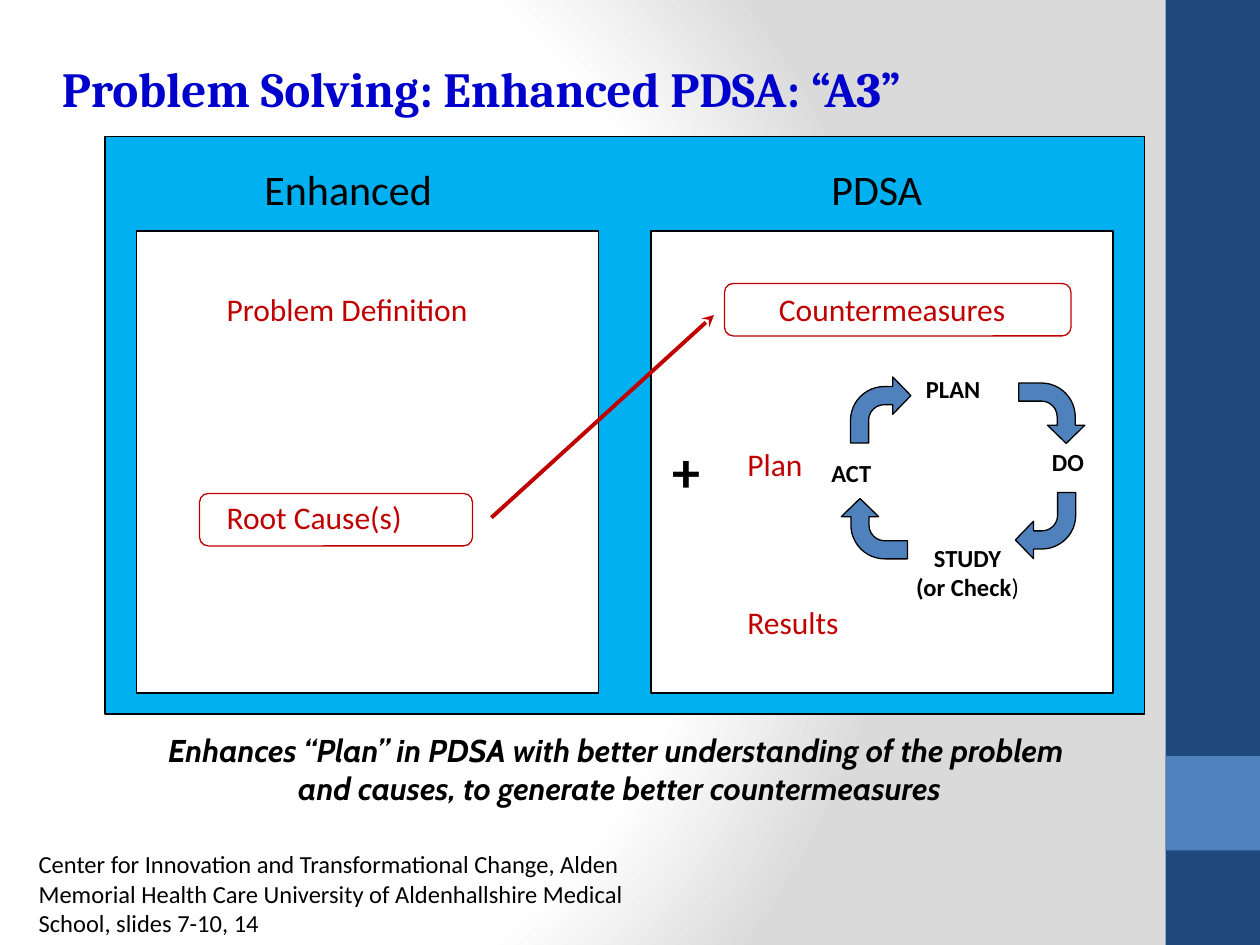
from lxml.etree import SubElement
from pptx import Presentation
from pptx.dml.color import RGBColor
from pptx.enum.shapes import MSO_CONNECTOR, MSO_SHAPE
from pptx.enum.text import MSO_ANCHOR, PP_ALIGN
from pptx.oxml import parse_xml
from pptx.oxml.ns import nsdecls, qn
from pptx.util import Inches, Pt

COLORS = {
    "white": "FFFFFF", "gray": "DADADA", "black": "000000", "navy": "1F497D",
    "blue": "4F81BD", "sky": "00B0F0", "red": "C00000", "title": "0000CC",
}
UNIT = Inches(1) // 12
COLS, ROWS = 120, 90


def rgb(name):
    """Return the named colour."""
    return RGBColor.from_string(COLORS[name])


def emu(*units):
    """Turn grid units into slide lengths."""
    return [round(u * UNIT) for u in units]


def within(box, x, y, w, h):
    """Place a box relative to the corner of another box."""
    return box[0] + x, box[1] + y, w, h


def fill_text(tf, text, font="Calibri", size=18, color="red", bold=False,
              italic=False, align=PP_ALIGN.LEFT, tail=""):
    """Write one paragraph per line, with an optional regular-weight tail."""
    tf.word_wrap = True
    for i, line in enumerate(text.split("\n")):
        p = tf.add_paragraph() if i else tf.paragraphs[0]
        p.alignment = align
        last = i == text.count("\n")
        for part, weight in ((line, bold), (tail if last else "", False)):
            if part:
                r = p.add_run()
                r.text = part
                r.font.name, r.font.size = font, Pt(size)
                r.font.bold, r.font.italic = weight, italic
                r.font.color.rgb = rgb(color)


def add_text(s, box, text, **fmt):
    """Add a text box."""
    fill_text(s.shapes.add_textbox(*emu(*box)).text_frame, text, **fmt)


def add_block(s, box, fill=None, line=None, kind=MSO_SHAPE.RECTANGLE):
    """Add a preset shape with a plain fill and outline."""
    sp = s.shapes.add_shape(kind, *emu(*box))
    sp.shadow.inherit = False
    if fill:
        sp.fill.solid()
        sp.fill.fore_color.rgb = rgb(fill)
    else:
        sp.fill.background()
    if line:
        sp.line.color.rgb = rgb(line)
        sp.line.width = Pt(0.75)
    else:
        sp.line.fill.background()
    return sp


def add_background(s):
    """Give the slide a round white to gray gradient."""
    s.background.fill.solid()
    stops = "".join(
        f'<a:gs pos="{pos}000"><a:srgbClr val="{COLORS[name]}"/></a:gs>'
        for pos, name in ((0, "white"), (75, "white"), (100, "gray")))
    grad = parse_xml(
        f'<a:gradFill {nsdecls("a")} rotWithShape="1"><a:gsLst>{stops}</a:gsLst>'
        '<a:path path="circle"><a:fillToRect l="20000" t="50000" r="100000" '
        'b="50000"/></a:path></a:gradFill>')
    solid = s.element.find(".//" + qn("p:bgPr")).find(qn("a:solidFill"))
    solid.getparent().replace(solid, grad)


def add_sidebar(s, box):
    """Draw the side band with its lighter square."""
    add_block(s, box, "navy")
    add_block(s, within(box, 0, 72, box[2], box[2]), "blue")


def add_title(s, box, text):
    """Place and format the title placeholder."""
    sp = s.shapes.title
    sp.left, sp.top, sp.width, sp.height = emu(*box)
    tf = sp.text_frame
    tf.margin_left = tf.margin_right = tf.margin_top = tf.margin_bottom = 0
    tf.vertical_anchor = MSO_ANCHOR.MIDDLE
    fill_text(tf, text, font="Cambria", size=28, color="title", bold=True)


def add_enhanced(s, box):
    """Draw the panel of problem and causes."""
    add_block(s, box, "white", "black")
    add_block(s, within(box, 6, 25, 26, 5), line="red",
              kind=MSO_SHAPE.ROUNDED_RECTANGLE)
    add_text(s, within(box, 7.4, 5, 33.6, 5.3), "Problem Definition")
    add_text(s, within(box, 7.4, 24.8, 26.3, 5.3), "Root Cause(s)")


def add_pdsa(s, box):
    """Draw the panel of countermeasures, plan and results."""
    add_block(s, box, "white", "black")
    add_block(s, within(box, 7, 5, 33, 5), line="red",
              kind=MSO_SHAPE.ROUNDED_RECTANGLE)
    add_text(s, within(box, 11, 5, 26.5, 4.8), "Countermeasures")
    add_text(s, within(box, 8, 19.8, 9.5, 5.3), "Plan")
    add_text(s, within(box, 8, 34.8, 14.5, 5.3), "Results")
    add_text(s, within(box, 0.9, 19, 7, 7.7), "+", size=32, color="black", bold=True)
    add_cycle(s, within(box, 16, 13, 28, 23))


def add_cycle(s, box):
    """Draw the four steps and the bent arrows between them."""
    fmt = {"size": 14, "color": "black", "bold": True}
    add_text(s, within(box, 9, 0, 9.5, 4.1), "PLAN", **fmt)
    add_text(s, within(box, 21, 7, 6.4, 4.1), "DO", **fmt)
    add_text(s, within(box, 6, 16.1, 16.3, 6.8), "STUDY\n(or Check", tail=")",
             align=PP_ALIGN.CENTER, **fmt)
    add_text(s, within(box, 0, 8, 7.6, 4.1), "ACT", **fmt)
    corners = ((3, 0.9), (19.3, 1.2), (18.7, 11.9), (2.4, 12.2))
    for turn, (x, y) in enumerate(corners):
        sp = add_block(s, within(box, x, y, 5.75, 6.3), "blue", "black",
                       MSO_SHAPE.BENT_ARROW)
        for i, share in enumerate((0.3, 0.31, 0.3, 0.56)):
            sp.adjustments[i] = share
        sp.rotation = 90 * turn


def add_arrow(s, start, end):
    """Draw the arrow from causes to countermeasures."""
    c = s.shapes.add_connector(MSO_CONNECTOR.STRAIGHT, *emu(*start, *end))
    c.line.color.rgb = rgb("red")
    c.line.width = Pt(2.25)
    SubElement(c.line._get_or_add_ln(), qn("a:tailEnd"), type="stealth")
    SubElement(c.element.spPr, qn("a:effectLst"))


def add_board(s, box):
    """Draw the board with its headings, two panels and linking arrow."""
    add_block(s, box, "sky", "black")
    add_enhanced(s, within(box, 3, 9, 44, 44))
    add_pdsa(s, within(box, 52, 9, 44, 44))
    for x, w, text in ((14, 22, "Enhanced"), (68, 13.4, "PDSA")):
        add_text(s, within(box, x, 2, w, 6.1), text, size=24, color="black")
    x, y = box[:2]
    add_arrow(s, (x + 36.8, y + 36.3), (x + 58, y + 17))


def main():
    """Build and save the slide."""
    prs = Presentation()
    prs.slide_width, prs.slide_height = emu(COLS, ROWS)
    s = prs.slides.add_slide(prs.slide_layouts[5])
    add_background(s)
    add_sidebar(s, (COLS - 9, 0, 9, ROWS))
    add_board(s, (10, 13, 99, 55))
    add_text(s, (0, 69, 118, 8.5),
             "Enhances “Plan” in PDSA with better understanding of the problem \n"
             "and causes, to generate better countermeasures",
             font="Cabin", color="black", bold=True, italic=True,
             align=PP_ALIGN.CENTER)
    add_title(s, (5.9, 5.6, 112, 5.6), "Problem Solving: Enhanced PDSA: “A3”")
    add_text(s, (2.5, 80.3, 65, 9.7),
             "Center for Innovation and Transformational Change, Alden "
             "Memorial Health Care University of Aldenhallshire Medical "
             "School, slides 7-10, 14", size=14, color="black")
    prs.save("out.pptx")


if __name__ == "__main__":
    main()
